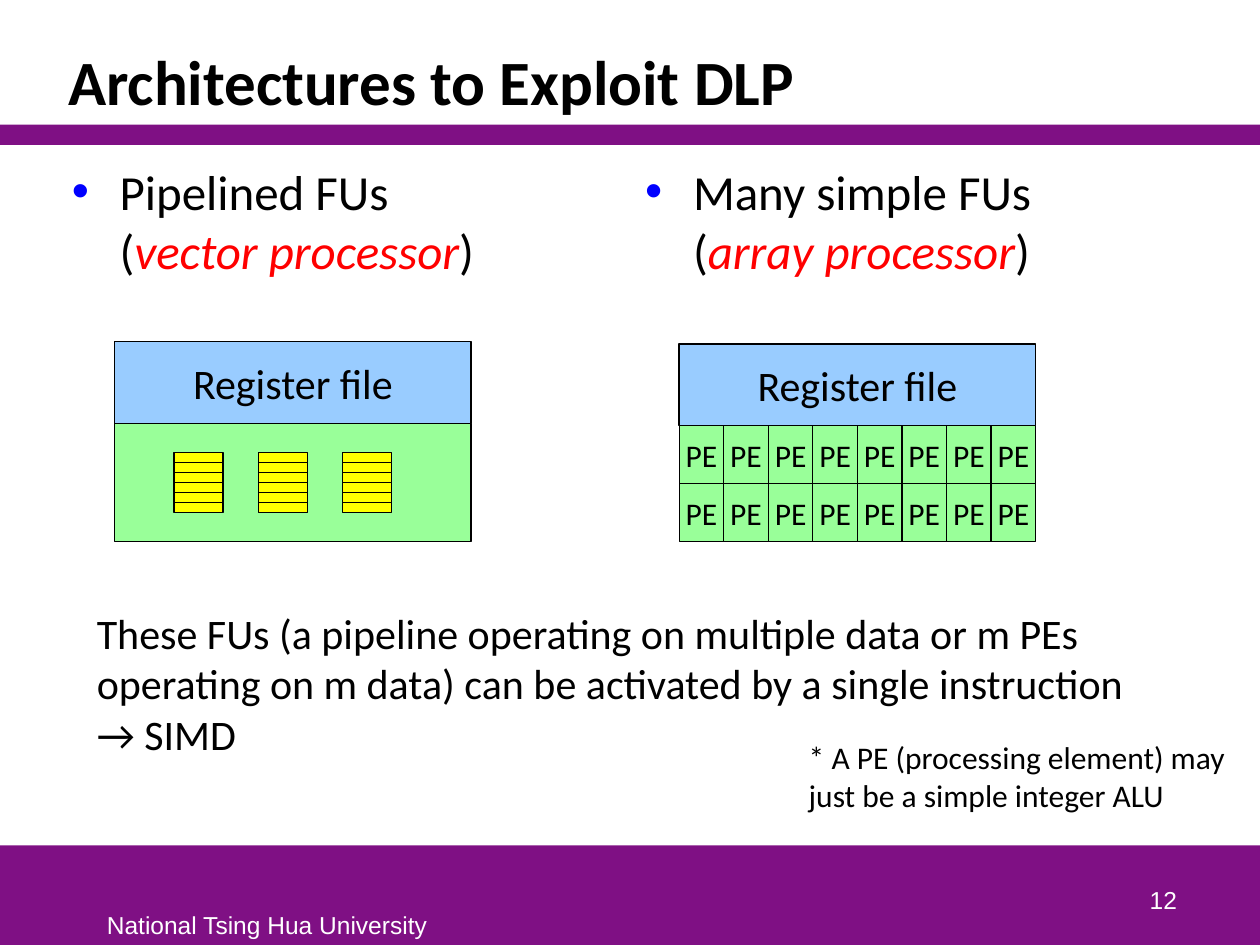
from lxml import etree
from pptx import Presentation
from pptx.dml.color import RGBColor
from pptx.enum import shapes, text
from pptx.oxml import ns
from pptx.util import Inches, Pt

COLORS = {
    "purple": "7F1084", "white": "FFFFFF", "black": "000000", "red": "FF0000",
    "bullet": "0000FF", "register": "99CCFF", "unit": "99FF99", "stage": "FFFF00",
}


def add_box(parent, left, top, width, height, color, label="", size=24, outlined=True):
    """Add a filled rectangle, with a centred label if one is given."""
    box = parent.shapes.add_shape(shapes.MSO_SHAPE.RECTANGLE, Inches(left), Inches(top),
                                  Inches(width), Inches(height))
    box.shadow.inherit = False
    box.fill.solid()
    box.fill.fore_color.rgb = RGBColor.from_string(COLORS[color])
    if outlined:
        box.line.color.rgb = RGBColor.from_string(COLORS["black"])
        box.line.width = Pt(0.75)
    else:
        box.line.fill.background()
    if label:
        frame = box.text_frame
        frame.margin_left = frame.margin_right = frame.margin_top = frame.margin_bottom = 0
        frame.vertical_anchor = text.MSO_ANCHOR.MIDDLE
        write(frame, [label], size, align=text.PP_ALIGN.CENTER)


def write(frame, lines, size, font="Calibri", color="black", align=text.PP_ALIGN.LEFT):
    """Put one paragraph per line into a text frame, all in the same style."""
    frame.text = "\n".join(lines)
    for paragraph in frame.paragraphs:
        paragraph.alignment = align
        paragraph.font.size = Pt(size)
        paragraph.font.name = font
        paragraph.font.color.rgb = RGBColor.from_string(COLORS[color])


presentation = Presentation()
presentation.slide_width = Inches(10)
presentation.slide_height = Inches(7.5)
slide = presentation.slides.add_slide(presentation.slide_layouts[3])

# Purple bands
add_box(slide, 0, 6.71, 10, 0.79, "purple", outlined=False)
add_box(slide, 0, 0.99, 10, 0.16, "purple", outlined=False)

# Title
title = slide.shapes.title
title.left, title.top, title.width, title.height = map(Inches, (0.44, 0.25, 8.97, 0.74))
title.text_frame.auto_size = text.MSO_AUTO_SIZE.NONE
title.text_frame.vertical_anchor = text.MSO_ANCHOR.BOTTOM
write(title.text_frame, ["Architectures to Exploit DLP"], 36)
title.text_frame.paragraphs[0].font.bold = True
title.text_frame.paragraphs[0].line_spacing = 0.85

# One bullet per column
columns = [(1, 0.47, "Pipelined FUs", "vector processor"),
           (2, 5.02, "Many simple FUs", "array processor")]
for index, left, approach, processor in columns:
    body = slide.placeholders[index]
    body.left, body.top, body.width, body.height = map(Inches, (left, 1.23, 4.39, 5.43))
    body.text_frame.auto_size = text.MSO_AUTO_SIZE.NONE
    paragraph = body.text_frame.paragraphs[0]
    properties = paragraph._p.get_or_add_pPr()
    properties.set("marL", str(Inches(0.38)))
    properties.set("indent", str(-Inches(0.38)))
    bullet_color = etree.SubElement(properties, ns.qn("a:buClr"))
    etree.SubElement(bullet_color, ns.qn("a:srgbClr"), val=COLORS["bullet"])
    etree.SubElement(properties, ns.qn("a:buFont"), typeface="Arial")
    etree.SubElement(properties, ns.qn("a:buChar"), char="•")
    paragraph.font.size = Pt(28)
    paragraph.font.name = "Calibri"
    paragraph.font.color.rgb = RGBColor.from_string(COLORS["black"])
    paragraph.add_run().text = approach
    paragraph.add_line_break()
    paragraph.add_run().text = "("
    name = paragraph.add_run()
    name.text = processor
    name.font.italic = True
    name.font.color.rgb = RGBColor.from_string(COLORS["red"])
    paragraph.add_run().text = ")"

# Array processor: register file above a grid of processing elements
array = slide.shapes.add_group_shape()
pe_width, pe_height = 2.83 / 8, 0.46
for row in range(2):
    for column in range(8):
        add_box(array, 5.39 + column * pe_width, 3.38 + row * pe_height,
                pe_width, pe_height, "unit", "PE", 18)
add_box(array, 5.39, 2.73, 2.83, 0.65, "register", "Register file")

# Vector processor: register file above three pipelines of six stages
add_box(slide, 0.91, 2.71, 2.83, 0.65, "register", "Register file")
add_box(slide, 0.91, 3.36, 2.83, 0.94, "unit")
for unit in range(3):
    pipeline = slide.shapes.add_group_shape()
    for stage in range(6):
        add_box(pipeline, 1.38 + unit * 0.67, 3.59 + stage * 0.08, 0.39, 0.08, "stage")

# Remarks, footer and page number
LEFT, RIGHT = text.PP_ALIGN.LEFT, text.PP_ALIGN.RIGHT
TOP, BOTTOM = text.MSO_ANCHOR.TOP, text.MSO_ANCHOR.BOTTOM
captions = [
    ((0.67, 4.77, 8.74, 1.31),
     ["These FUs (a pipeline operating on multiple data or m PEs operating on m data) "
      "can be activated by a single instruction", "→ SIMD"],
     24, "Calibri", "black", LEFT, TOP),
    ((6.32, 5.81, 3.61, 0.71),
     ["* A PE (processing element) may just be a simple integer ALU"],
     18, "Calibri", "black", LEFT, TOP),
    ((0.75, 7.17, 2.76, 0.33), ["National Tsing Hua University"],
     14, "Arial", "white", LEFT, TOP),
    ((7.36, 6.81, 2.08, 0.5), ["12"], 14, "Arial", "white", RIGHT, BOTTOM),
]
for place, lines, size, font, color, align, anchor in captions:
    caption = slide.shapes.add_textbox(*map(Inches, place))
    caption.text_frame.word_wrap = True
    caption.text_frame.vertical_anchor = anchor
    write(caption.text_frame, lines, size, font, color, align)

presentation.save("out.pptx")
